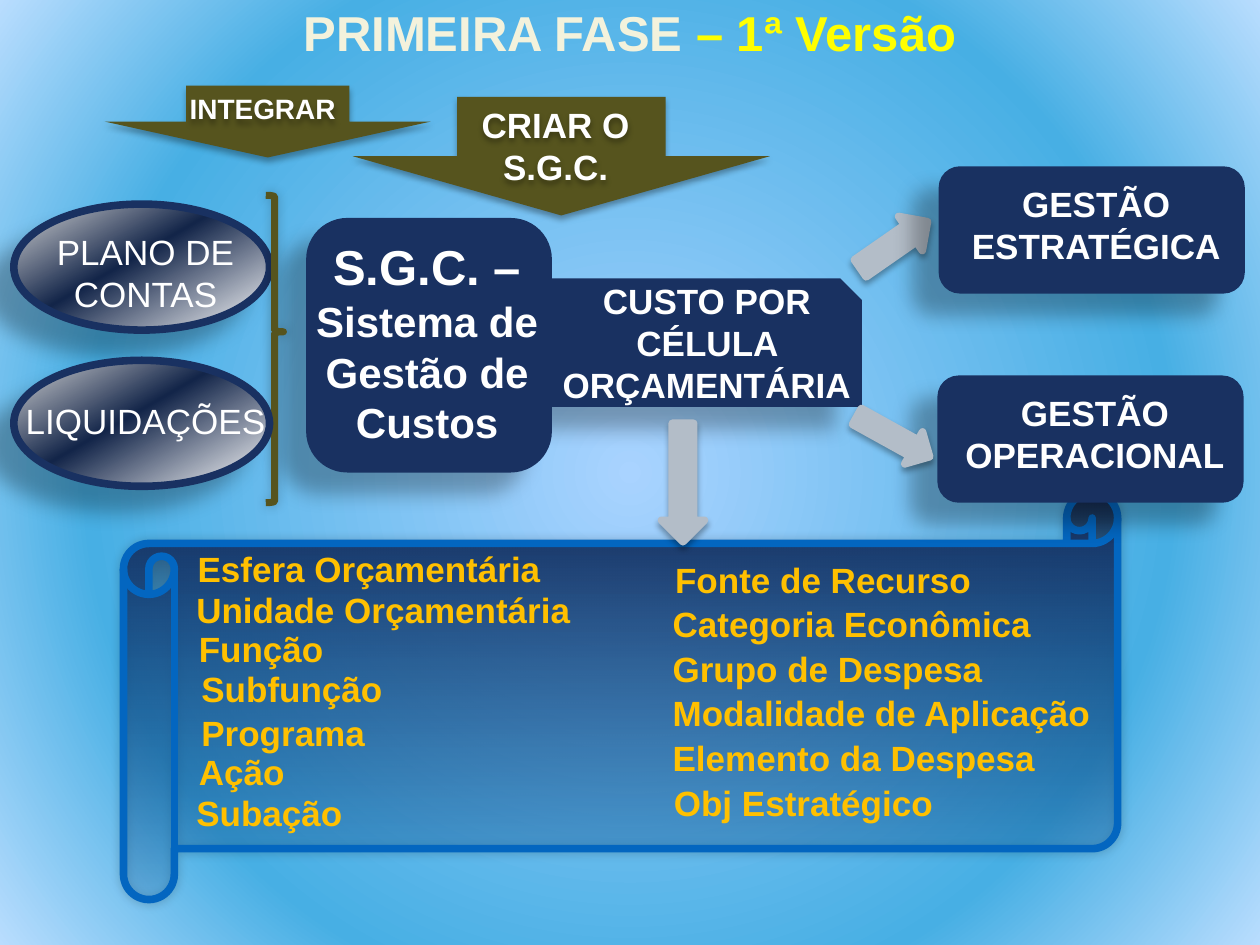
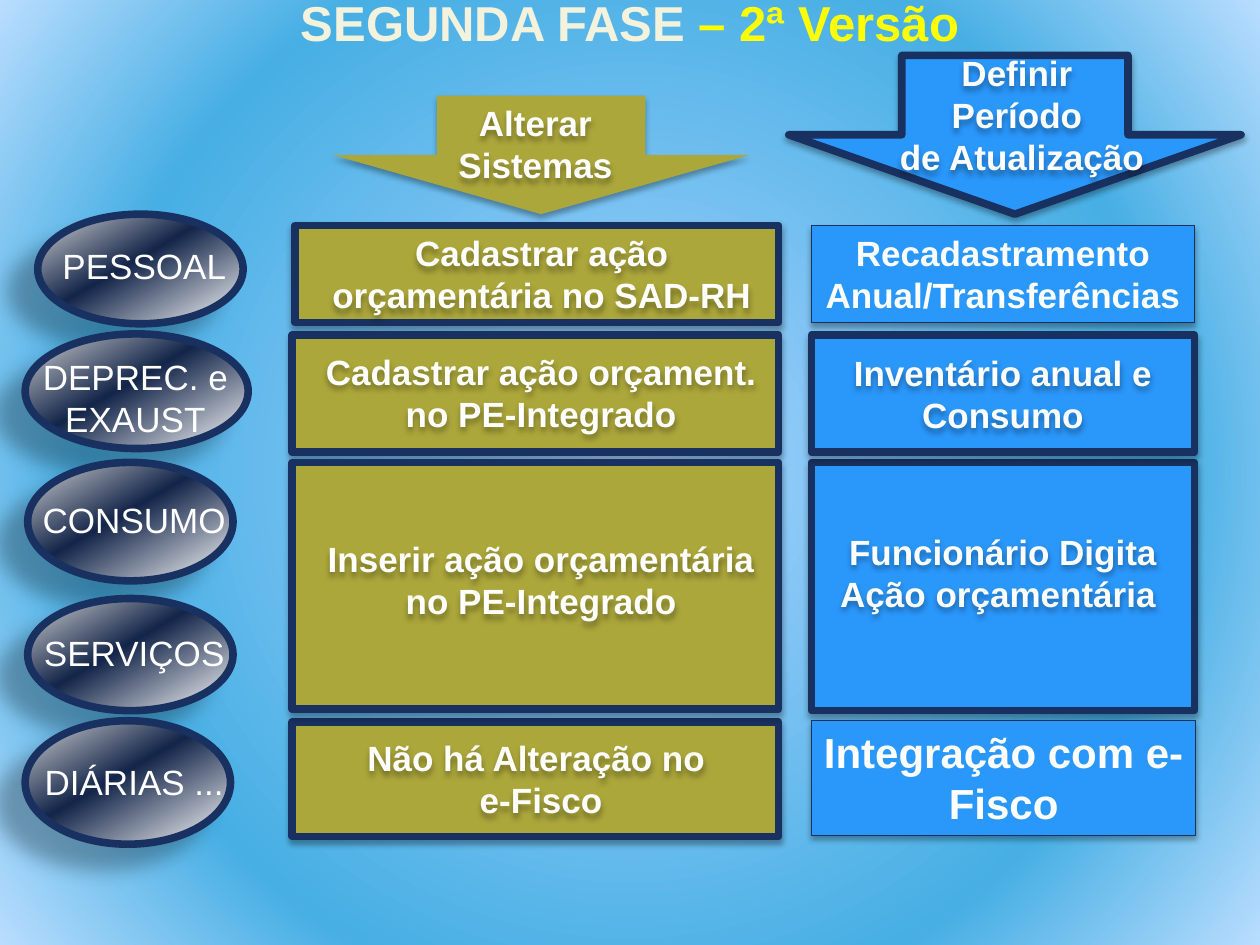
from lxml.etree import SubElement
from pptx import Presentation
from pptx.dml.color import RGBColor
from pptx.enum.shapes import MSO_SHAPE
from pptx.enum.text import MSO_ANCHOR, PP_ALIGN
from pptx.oxml.ns import qn
from pptx.util import Emu, Inches, Pt

FONT = "Arial"
NAVY = RGBColor(0x19, 0x31, 0x61)
DARK_NAVY = RGBColor(0x13, 0x25, 0x49)
OLIVE = RGBColor(0x56, 0x54, 0x1E)
KHAKI = RGBColor(0xAC, 0xA7, 0x3B)
BLUE = RGBColor(0x2A, 0x97, 0xFB)
SCROLL_LINE = RGBColor(0x03, 0x66, 0xC0)
SCROLL_END = RGBColor(0x03, 0x56, 0xA1)
GREY = RGBColor(0xB3, 0xBD, 0xC8)
SILVER = RGBColor(0xD7, 0xD7, 0xD7)
WHITE = RGBColor(0xFF, 0xFF, 0xFF)
CREAM = RGBColor(0xF3, 0xF2, 0xDC)
YELLOW = RGBColor(0xFF, 0xFF, 0x00)
AMBER = RGBColor(0xFF, 0xC0, 0x00)
SKY_CENTRE = RGBColor(0xA9, 0xD3, 0xFF)
SKY_RING = RGBColor(0x47, 0xAF, 0xE4)
SKY_EDGE = RGBColor(0xB9, 0xDD, 0xFE)

THICK = 4.33
# Shadows: opacity %, blur pt, distance pt, direction in degrees
DEEP = (28, 11.8, 19.7, 141)
SOFT = (32, 3.5, 2.2, 90)
SCROLL_SHADOW = (20, 6, 0, 225)
BRACE_SHADOW = (20, 6, 0, 315)

OVAL_STOPS = [(0, SILVER), (45, DARK_NAVY), (100, WHITE)]
SCROLL_STOPS = [(0, NAVY), (100, SCROLL_END, 17)]
SKY_STOPS = [(0, SKY_CENTRE), (69, SKY_RING), (100, SKY_EDGE)]


def add_color(parent, color, alpha=100):
    clr = SubElement(parent, qn("a:srgbClr"), val=str(color))
    if alpha < 100:
        SubElement(clr, qn("a:alpha"), val=str(alpha * 1000))


def set_gradient(fill, owner, stops, angle=None):
    """Give fill a linear gradient, or a circular one without an angle."""
    fill.gradient()
    grad = next(owner.iter(qn("a:gradFill")))
    for child in list(grad):
        grad.remove(child)
    stop_list = SubElement(grad, qn("a:gsLst"))
    for pos, *color in stops:
        add_color(SubElement(stop_list, qn("a:gs"), pos=str(pos * 1000)), *color)
    if angle is None:
        path = SubElement(grad, qn("a:path"), path="circle")
        sides = dict.fromkeys("ltrb", "50000")
        SubElement(path, qn("a:fillToRect"), **sides)
    else:
        SubElement(grad, qn("a:lin"), ang=str(angle * 60000), scaled="0")


def set_shadow(sp, shadow):
    sp.shadow.inherit = False
    if shadow:
        alpha, blur, dist, angle = shadow
        effects = sp.element.spPr.find(qn("a:effectLst"))
        outer = SubElement(effects, qn("a:outerShdw"), blurRad=str(Pt(blur)),
                           dist=str(Pt(dist)), dir=str(angle * 60000),
                           algn="ctr", rotWithShape="0")
        add_color(outer, RGBColor(0, 0, 0), alpha)


def add_shape(slide, kind, at, fill=None, line=None, width=THICK, shadow=DEEP,
              angle=90, rotation=0):
    """Fill is a colour, a list of gradient stops or None."""
    sp = slide.shapes.add_shape(kind, *map(Inches, at))
    sp.rotation = rotation
    if fill is None:
        sp.fill.background()
    elif isinstance(fill, list):
        set_gradient(sp.fill, sp.element.spPr, fill, angle)
    else:
        sp.fill.solid()
        sp.fill.fore_color.rgb = fill
    if line is None:
        sp.line.fill.background()
    else:
        sp.line.color.rgb = line
        sp.line.width = Pt(width)
        SubElement(sp.element.spPr.find(qn("a:ln")), qn("a:round"))
    set_shadow(sp, shadow)
    return sp


def write(tf, *paragraphs, size=20, color=WHITE, bold=True,
          align=PP_ALIGN.CENTER, wrap=True):
    """Each paragraph is a string or a list of (text, size, colour) runs."""
    tf.word_wrap = wrap
    tf.vertical_anchor = MSO_ANCHOR.TOP
    for i, runs in enumerate(paragraphs):
        p = tf.paragraphs[0] if i == 0 else tf.add_paragraph()
        p.alignment = align
        if isinstance(runs, str):
            runs = [(runs, size, color)]
        for text, run_size, run_color in runs:
            r = p.add_run()
            r.text = text
            r.font.name = FONT
            r.font.size = Pt(run_size)
            r.font.bold = bold
            r.font.color.rgb = run_color


def add_text(slide, at, *paragraphs, shadow=None, **style):
    box = slide.shapes.add_textbox(*map(Inches, at))
    write(box.text_frame, *paragraphs, **style)
    if shadow:
        set_shadow(box, shadow)


def add_phase(prs, phase, version, top):
    slide = prs.slides.add_slide(prs.slide_layouts[6])
    set_gradient(slide.background.fill, slide.element, SKY_STOPS)
    add_text(slide, (0, top, 10, 0.55),
             [(phase, 28, CREAM), (version, 28, YELLOW)])
    return slide


def add_oval(slide, at, label_at, text):
    add_shape(slide, MSO_SHAPE.OVAL, at, OVAL_STOPS, NAVY, angle=60)
    add_text(slide, label_at, text, bold=False)


def add_banner(slide, at, label_at, *lines, fill=OLIVE, line=None, size=20):
    add_shape(slide, MSO_SHAPE.DOWN_ARROW, at, fill, line, shadow=SOFT)
    add_text(slide, label_at, *lines, size=size, shadow=SOFT)


def add_navy_box(slide, kind, at, label_at, text):
    add_shape(slide, kind, at, NAVY)
    add_text(slide, label_at, text)


def add_grey_arrow(slide, at, rotation):
    add_shape(slide, MSO_SHAPE.RIGHT_ARROW, at, GREY, GREY, shadow=SOFT,
              rotation=rotation)


def add_step(slide, at, label_at, *lines, fill=KHAKI):
    add_shape(slide, MSO_SHAPE.RECTANGLE, at, fill, NAVY, shadow=SOFT)
    add_text(slide, label_at, *lines, shadow=SOFT)


def add_thin_step(slide, at, text, size=20):
    sp = add_shape(slide, MSO_SHAPE.RECTANGLE, at, BLUE, NAVY, 0.75, SOFT)
    write(sp.text_frame, text, size=size)


def build_first_phase(prs):
    slide = add_phase(prs, "PRIMEIRA FASE ", "– 1ª Versão", -0.03)
    add_shape(slide, MSO_SHAPE.HORIZONTAL_SCROLL, (0.98, 3.91, 7.89, 3.23),
              SCROLL_STOPS, SCROLL_LINE, shadow=SCROLL_SHADOW)
    add_navy_box(slide, MSO_SHAPE.SNIP_1_RECTANGLE, (3.41, 2.21, 3.43, 1.02),
                 (4.09, 2.17, 3.04, 1.11), "CUSTO POR CÉLULA ORÇAMENTÁRIA")
    add_oval(slide, (0.11, 1.62, 2.03, 1), (-0.12, 1.78, 2.55, 0.89),
             "PLANO DE CONTAS")
    add_navy_box(slide, MSO_SHAPE.ROUNDED_RECTANGLE, (2.43, 1.73, 1.95, 2.02),
                 (2.32, 1.83, 2.14, 1.78),
                 [("S.G.C. – ", 28, WHITE),
                  ("Sistema de Gestão de Custos", 24, WHITE)])
    add_grey_arrow(slide, (6.77, 1.78, 0.65, 0.33), 325.2)
    for left, top, goal in [(7.45, 1.32, "GESTÃO ESTRATÉGICA"),
                            (7.44, 2.98, "GESTÃO OPERACIONAL")]:
        add_navy_box(slide, MSO_SHAPE.ROUNDED_RECTANGLE, (left, top, 2.43, 1.01),
                     (left - 0.24, top + 0.08, 2.98, 0.77), goal)
    add_grey_arrow(slide, (6.76, 3.32, 0.66, 0.29), 29)
    add_banner(slide, (0.83, 0.68, 2.59, 0.57), (1.07, 0.68, 2.03, 0.37),
               "INTEGRAR", size=16)
    add_grey_arrow(slide, (4.95, 3.66, 0.94, 0.34), 90)
    brace = add_shape(slide, MSO_SHAPE.RIGHT_BRACE, (2.11, 1.55, 0.14, 2.44),
                      line=OLIVE, width=4, shadow=BRACE_SHADOW)
    brace.adjustments[0], brace.adjustments[1] = 0.083, 0.444
    add_oval(slide, (0.11, 2.86, 2.03, 1), (-0.12, 3.12, 2.55, 0.44),
             "LIQUIDAÇÕES")

    budget_fields = [
        (1.47, 4.3, "Esfera Orçamentária"),
        (1.46, 4.62, "Unidade Orçamentária"),
        (1.48, 4.93, "Função"),
        (1.5, 5.25, "Subfunção"),
        (1.5, 5.6, "Programa"),
        (1.48, 5.91, "Ação"),
        (1.46, 6.23, "Subação"),
        (5.26, 4.38, "Fonte de Recurso"),
        (5.24, 4.73, "Categoria Econômica"),
        (5.24, 5.09, "Grupo de Despesa"),
        (5.24, 5.44, "Modalidade de Aplicação"),
        (5.24, 5.8, "Elemento da Despesa"),
        (5.25, 6.15, "Obj Estratégico"),
    ]
    for left, top, field in budget_fields:
        add_text(slide, (left, top, 3.54, 0.44), field, color=AMBER,
                 align=PP_ALIGN.LEFT)
    add_banner(slide, (2.8, 0.77, 3.31, 0.94), (3.11, 0.77, 2.6, 0.77),
               "CRIAR O", "S.G.C.")


def build_second_phase(prs):
    slide = add_phase(prs, "SEGUNDA FASE ", "– 2ª Versão", -0.11)
    ovals = [
        ((0.3, 1.7, 1.63, 0.87), (0.12, 1.89, 2.05, 0.44), "PESSOAL"),
        ((0.2, 2.65, 1.77, 0.91), (-0.04, 2.77, 2.23, 0.77), "DEPREC. e EXAUST"),
        ((0.22, 3.67, 1.63, 0.94), (0.04, 3.91, 2.05, 0.44), "CONSUMO"),
        ((0.22, 4.75, 1.63, 0.89), (0.04, 4.96, 2.05, 0.44), "SERVIÇOS"),
        ((0.2, 5.72, 1.63, 0.98), (0.04, 5.99, 2.05, 0.44), "DIÁRIAS ..."),
    ]
    for oval in ovals:
        add_oval(slide, *oval)

    add_thin_step(slide, (6.44, 1.79, 3.04, 0.77),
                  "Recadastramento Anual/Transferências")
    add_step(slide, (6.44, 3.67, 3.04, 1.97), (6.44, 4.16, 3.04, 0.77),
             "Funcionário Digita Ação orçamentária ", fill=BLUE)
    add_banner(slide, (2.64, 0.76, 3.31, 0.94), (2.95, 0.76, 2.6, 0.77),
               "Alterar", "Sistemas", fill=KHAKI)
    add_thin_step(slide, (6.44, 5.72, 3.05, 0.91), "Integração com e-Fisco", 24)
    add_step(slide, (6.44, 2.66, 3.04, 0.93), (6.44, 2.74, 3.04, 0.77),
             "Inventário anual e Consumo", fill=BLUE)
    add_step(slide, (2.34, 1.79, 3.84, 0.77), (2.42, 1.79, 3.76, 0.77),
             "Cadastrar ação orçamentária no SAD-RH")
    add_banner(slide, (6.26, 0.44, 3.59, 1.26), (6.57, 0.36, 3.08, 1.11),
               "Definir ", "Período ", "de Atualização", fill=BLUE, line=NAVY)

    system_steps = [
        (2.66, 0.93, 2.73, ["Cadastrar ação orçament. no PE-Integrado"]),
        (5.73, 0.91, 5.8, ["Não há Alteração no ", "e-Fisco"]),
        (3.67, 1.96, 4.22, ["Inserir ação orçamentária no PE-Integrado"]),
    ]
    for top, height, label_top, lines in system_steps:
        add_step(slide, (2.32, top, 3.86, height), (2.41, label_top, 3.77, 0.77),
                 *lines)


def main():
    prs = Presentation()
    prs.slide_width, prs.slide_height = Inches(10), Inches(7.5)
    build_first_phase(prs)
    build_second_phase(prs)
    prs.save("out.pptx")


if __name__ == "__main__":
    main()
